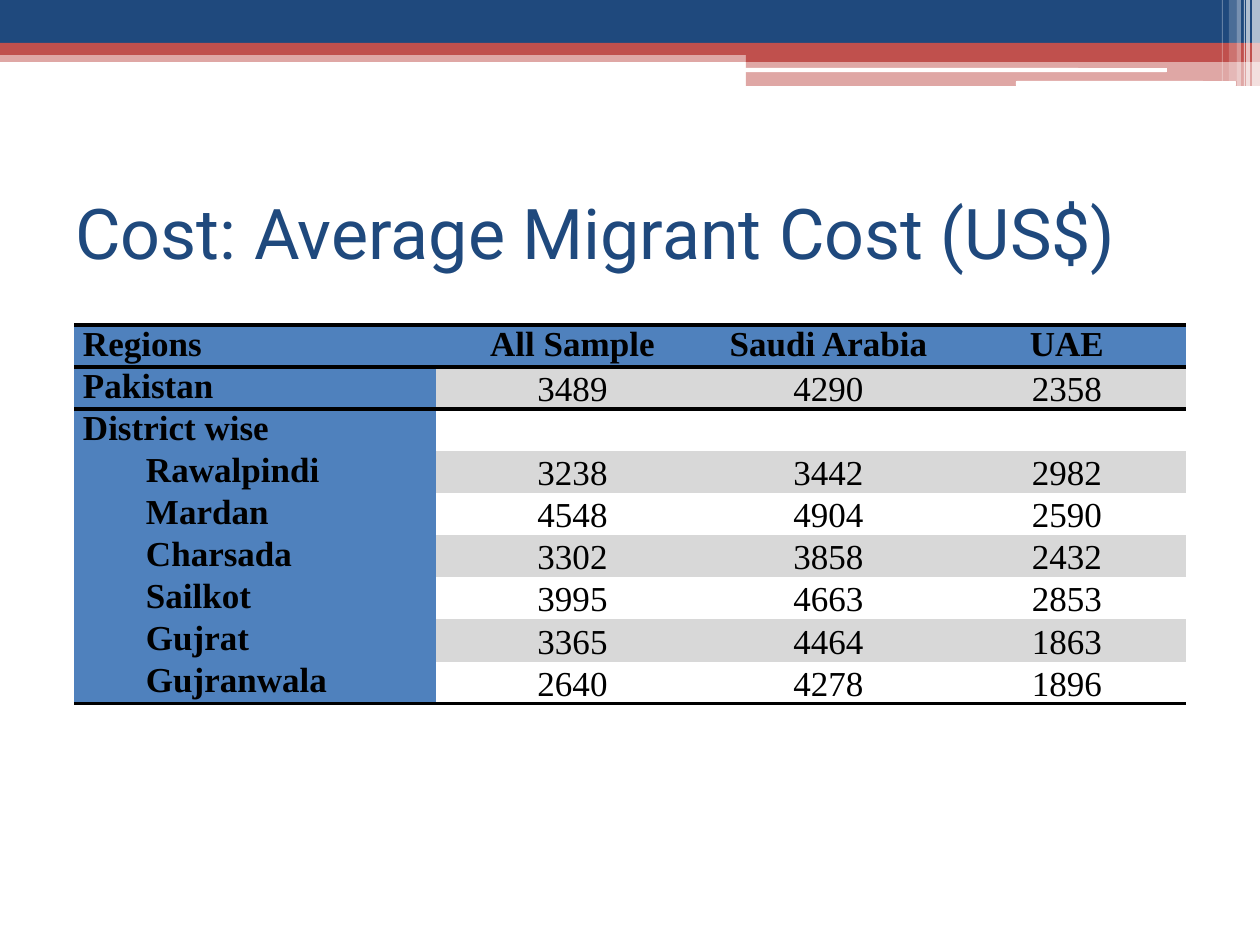
from collections import namedtuple

from lxml.etree import SubElement
from pptx import Presentation
from pptx.dml.color import RGBColor
from pptx.enum.shapes import MSO_SHAPE
from pptx.enum.text import MSO_ANCHOR, PP_ALIGN
from pptx.oxml.ns import qn
from pptx.util import Emu, Pt

Box = namedtuple("Box", "left top width height")

NAVY = RGBColor(0x1F, 0x49, 0x7D)
RED = RGBColor(0xC0, 0x50, 0x4D)
BLUE = RGBColor(0x4F, 0x81, 0xBD)
GREY = RGBColor(0xD8, 0xD8, 0xD8)
WHITE = RGBColor(0xFF, 0xFF, 0xFF)
BLACK = RGBColor(0x00, 0x00, 0x00)
TITLE_FONT = "Roboto"
TABLE_FONT = "Times New Roman"
PLAIN_STYLE = "{2D5ABB26-0587-4C30-8999-92F81FD0307C}"

ROW_HEIGHT = 39
COLUMN_WIDTHS = [362, 273, 239, 238]
HEADINGS = ["Regions", "All Sample", "Saudi Arabia", "UAE"]
TOTALS = [
    ["Pakistan", "3489", "4290", "2358"],
    ["District wise", "", "", ""],
]
DISTRICTS = [
    ["Rawalpindi", "3238", "3442", "2982"],
    ["Mardan", "4548", "4904", "2590"],
    ["Charsada", "3302", "3858", "2432"],
    ["Sailkot", "3995", "4663", "2853"],
    ["Gujrat", "3365", "4464", "1863"],
    ["Gujranwala", "2640", "4278", "1896"],
]


def px(length):
    return Emu(round(length * 914400 / 126))


def add_bar(page, box, color, opacity=100, kind=MSO_SHAPE.RECTANGLE):
    bar = page.shapes.add_shape(kind, *map(px, box))
    bar.shadow.inherit = False
    bar.line.fill.background()
    bar.fill.solid()
    bar.fill.fore_color.rgb = color
    if opacity < 100:
        tint = bar.fill._xPr.find(".//" + qn("a:srgbClr"))
        SubElement(tint, qn("a:alpha"), val=str(opacity * 1000))


def add_span(para, text, font, size, color, bold=False):
    span = para.add_run()
    span.text = text
    span.font.name = font
    span.font.size = Pt(size)
    span.font.bold = bold
    span.font.color.rgb = color


def add_banner(page, box):
    right = box.left + box.width
    tab_width = 514
    tab_left = right - tab_width
    for left, top, width, height, color, opacity in [
        (box.left, 50, box.width, 12, RED, 50),
        (box.left, 0, box.width, 43, NAVY, 100),
        (box.left, 43, box.width, 12, RED, 100),
        (tab_left, 49, tab_width, 13, RED, 100),
        (tab_left, 61, tab_width, 25, RED, 50),
    ]:
        add_bar(page, Box(left, box.top + top, width, height), color, opacity)

    for offset, top, width, height in [(515, 68, 422, 4), (244, 81, 220, 5)]:
        slot = Box(right - offset, box.top + top, width, height)
        add_bar(page, slot, WHITE, kind=MSO_SHAPE.ROUNDED_RECTANGLE)

    for offset, width, height, opacity in [
        (8, 8, 86, 65),
        (14, 4, 86, 65),
        (16, 1, 86, 60),
        (23, 4, 86, 40),
        (31, 8, 81, 20),
        (38, 1, 81, 30),
    ]:
        add_bar(page, Box(right - offset, box.top, width, height), WHITE, opacity)


def add_title(page, box, text):
    frame = page.shapes.add_textbox(*map(px, box)).text_frame
    frame.word_wrap = True
    frame.vertical_anchor = MSO_ANCHOR.MIDDLE
    add_span(frame.paragraphs[0], text, TITLE_FONT, 40, NAVY)


def add_rule(cell, side):
    line = SubElement(cell._tc.get_or_add_tcPr(), qn(side), w=str(Pt(2.25)))
    SubElement(SubElement(line, qn("a:solidFill")), qn("a:srgbClr"), val=str(BLACK))


def fill_cell(cell, text, bold, centred, fill):
    cell.margin_left = cell.margin_right = px(9)
    cell.margin_top = cell.margin_bottom = 0
    if fill is None:
        cell.fill.background()
    else:
        cell.fill.solid()
        cell.fill.fore_color.rgb = fill
    para = cell.text_frame.paragraphs[0]
    para.font.size = Pt(20)
    if centred:
        para.alignment = PP_ALIGN.CENTER
    if text:
        add_span(para, text, TABLE_FONT, 20, BLACK, bold)


def add_cost_table(page, box):
    rows = [HEADINGS] + TOTALS + DISTRICTS
    first_district = 1 + len(TOTALS)
    frame = page.shapes.add_table(len(rows), len(HEADINGS), *map(px, box))
    table = frame.table
    table.horz_banding = False
    table._tbl.tblPr.find(qn("a:tableStyleId")).text = PLAIN_STYLE
    for column, width in zip(table.columns, COLUMN_WIDTHS):
        column.width = px(width)

    for row, values in enumerate(rows):
        table.rows[row].height = px(ROW_HEIGHT)
        for column, text in enumerate(values):
            cell = table.cell(row, column)
            if row in (0, 1):
                add_rule(cell, "a:lnT")
            if row in (0, len(rows) - 1):
                add_rule(cell, "a:lnB")
            header = row == 0 or column == 0
            band = GREY if row % 2 else None
            fill_cell(cell, text, header, column > 0, BLUE if header else band)
            if not header:
                cell.vertical_anchor = MSO_ANCHOR.BOTTOM
            if column == 0 and row >= first_district:
                properties = cell.text_frame.paragraphs[0]._p.get_or_add_pPr()
                properties.set("marL", str(px(63)))
                properties.set("indent", "0")


def main():
    deck = Presentation()
    deck.slide_width, deck.slide_height = px(1260), px(945)
    page = deck.slides.add_slide(deck.slide_layouts[6])
    add_banner(page, Box(0, 0, 1260, 86))
    add_title(page, Box(63, 158, 1134, 147), "Cost: Average Migrant Cost (US$)")
    row_count = 1 + len(TOTALS) + len(DISTRICTS)
    add_cost_table(page, Box(74, 325, sum(COLUMN_WIDTHS), row_count * ROW_HEIGHT))
    deck.save("out.pptx")


if __name__ == "__main__":
    main()
